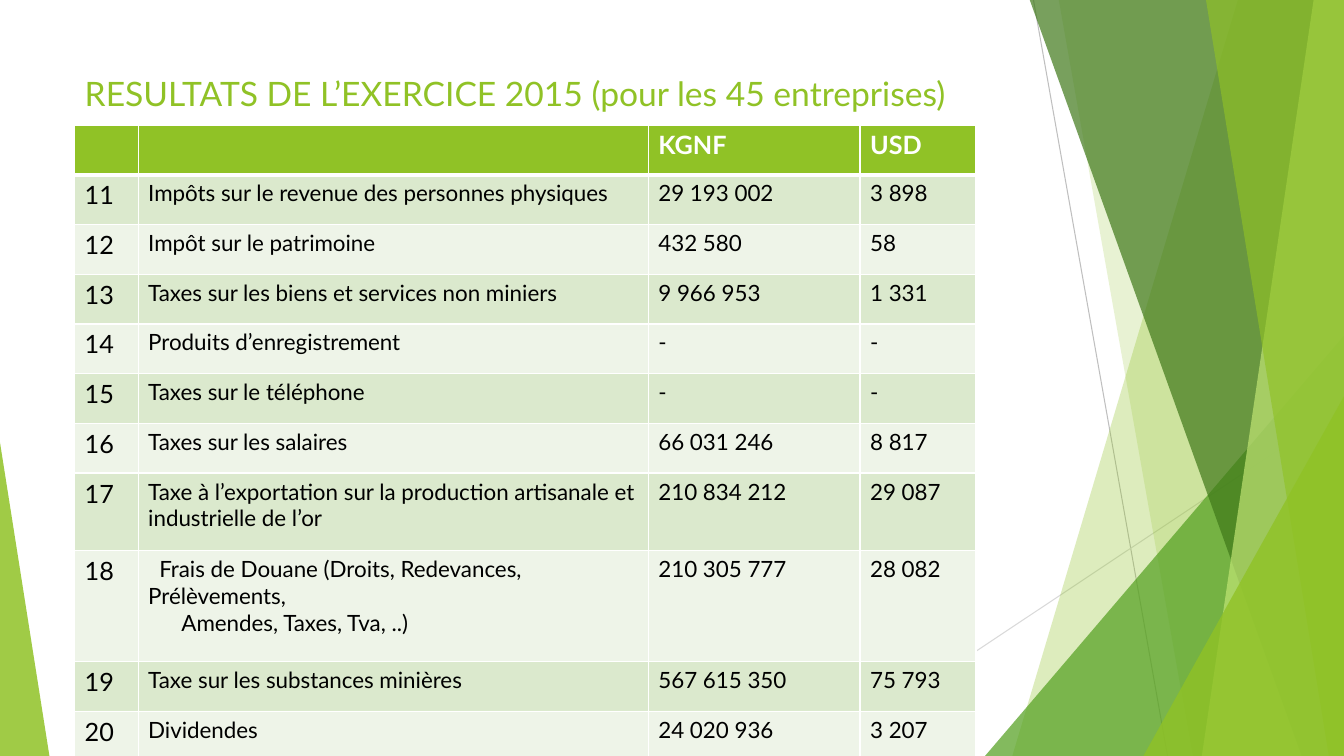
"""Build the slide of 2015 results for the 45 companies."""
from dataclasses import dataclass

from lxml import etree
from pptx import Presentation
from pptx.dml.color import RGBColor
from pptx.enum.shapes import MSO_CONNECTOR, MSO_SHAPE
from pptx.enum.text import MSO_ANCHOR, MSO_AUTO_SIZE, PP_ALIGN
from pptx.oxml.ns import qn
from pptx.util import Inches, Pt

STRAIGHT = MSO_CONNECTOR.STRAIGHT
TRIANGLE = MSO_SHAPE.ISOSCELES_TRIANGLE
LEFT = PP_ALIGN.LEFT
TOP = MSO_ANCHOR.TOP
NO_FIT = MSO_AUTO_SIZE.NONE


@dataclass(frozen=True)
class Theme:
    font: str = "Lato"
    lime: str = "90C226"
    green: str = "54A021"
    dark: str = "3F7819"
    pale: str = "C0E474"
    white: str = "FFFFFF"
    ink: str = "000000"
    bands: tuple[str, str] = ("DBE9CD", "EEF4E8")
    title: int = 24
    head: int = 18
    body: int = 16


@dataclass(frozen=True)
class Ray:
    start: tuple[float, float]
    end: tuple[float, float]
    color: str


@dataclass(frozen=True)
class Facet:
    top: tuple[float, float]
    foot: tuple[float, float]
    color: str
    alpha: int


@dataclass(frozen=True)
class Wedge:
    box: tuple[float, float, float, float]
    tip: float
    color: str
    alpha: int


@dataclass(frozen=True)
class Para:
    text: str
    margin: float = 0
    indent: float = 0


THEME = Theme()
WIDTH, HEIGHT = 13.33, 7.5
RAYS = [
    Ray((10.25, 0), (11.58, HEIGHT), "BFBFBF"),
    Ray((WIDTH, 4.03), (8.12, HEIGHT), "D9D9D9"),
]
PARTS = [
    Facet((12.28, -0.01), (10.04, HEIGHT), THEME.lime, 30),
    Facet((10.5, -0.01), (11.83, HEIGHT), THEME.lime, 20),
    Wedge((9.77, 3.33, 3.56, 4.17), 1, THEME.green, 72),
    Facet((10.21, -0.01), (12.91, HEIGHT), THEME.dark, 70),
    Facet((13.03, -0.01), (11.92, HEIGHT), THEME.pale, 70),
    Facet((11.96, -0.01), (13.18, HEIGHT), THEME.lime, 65),
    Wedge((11.34, 3.93, 1.99, 3.57), 1, THEME.lime, 80),
    Wedge((0, 4.39, 0.49, 3.11), 0, THEME.lime, 85),
]
CUSTOMS = (
    Para("Frais de Douane (Droits, Redevances, Prélèvements,", indent=0.11),
    Para("Amendes, Taxes, Tva, ..)", margin=0.33),
)
HEADS = ["", "", "KGNF", "USD"]
FIRST = 11
ITEMS = [
    ("Impôts sur le revenue des personnes physiques", "29 193 002", "3 898"),
    ("Impôt sur le patrimoine", "432 580", "58"),
    ("Taxes sur les biens et services non miniers", "9 966 953", "1 331"),
    ("Produits d’enregistrement", "-", "-"),
    ("Taxes sur le téléphone", "-", "-"),
    ("Taxes sur les salaires", "66 031 246", "8 817"),
    ("Taxe à l’exportation sur la production artisanale et industrielle de l’or",
     "210 834 212", "29 087"),
    (CUSTOMS, "210 305 777", "28 082"),
    ("Taxe sur les substances minières", "567 615 350", "75 793"),
    ("Dividendes", "24 020 936", "3 207"),
]
COLS = [0.63, 5.06, 2.1, 1.15]
TALL = {7: 0.77, 8: 1.1}
TABLE_H = 6.31


def paint(shape, color: str, alpha: int) -> None:
    shape.shadow.inherit = False
    shape.fill.solid()
    shape.fill.fore_color.rgb = RGBColor.from_string(color)
    shape.line.fill.background()
    tint = shape.fill._xPr.find(".//" + qn("a:srgbClr"))
    etree.SubElement(tint, qn("a:alpha"), val=str(alpha * 1000))


def draw_ray(slide, ray: Ray) -> None:
    ends = [Inches(v) for v in (*ray.start, *ray.end)]
    line = slide.shapes.add_connector(STRAIGHT, *ends)
    line.line.color.rgb = RGBColor.from_string(ray.color)
    line.line.width = Pt(0.75)
    etree.SubElement(line._element.spPr, qn("a:effectLst"))


def draw_part(slide, part: Facet | Wedge) -> None:
    if isinstance(part, Wedge):
        shape = slide.shapes.add_shape(TRIANGLE, *map(Inches, part.box))
        shape.adjustments[0] = part.tip
    else:
        edge = [(WIDTH, part.top[1]), (WIDTH, HEIGHT), part.foot]
        path = slide.shapes.build_freeform(*map(Inches, part.top))
        path.add_line_segments([(Inches(x), Inches(y)) for x, y in edge])
        shape = path.convert_to_shape()
    paint(shape, part.color, part.alpha)


def add_run(para, text: str, size: int, color: str, bold: bool = False) -> None:
    run = para.add_run()
    run.text = text
    run.font.name = THEME.font
    run.font.size = Pt(size)
    run.font.bold = bold
    run.font.color.rgb = RGBColor.from_string(color)


def draw_title(slide, text: str) -> None:
    title = slide.shapes.title
    title.left, title.top = Inches(0.74), Inches(0.67)
    title.width, title.height = Inches(11.61), Inches(0.57)
    frame = title.text_frame
    frame.auto_size = NO_FIT
    frame.vertical_anchor = TOP
    frame.paragraphs[0].alignment = LEFT
    add_run(frame.paragraphs[0], text, THEME.title, THEME.lime)


def set_edges(cell, base: int) -> None:
    props = cell._tc.get_or_add_tcPr()
    for side, width in (("L", 1), ("R", 1), ("T", 1), ("B", base)):
        edge = etree.SubElement(props, qn("a:ln" + side), w=str(Pt(width)))
        fill = etree.SubElement(edge, qn("a:solidFill"))
        etree.SubElement(fill, qn("a:srgbClr"), val=THEME.white)


def fill_cell(cell, paras: tuple[Para, ...], row: int, col: int) -> None:
    head = row == 0
    set_edges(cell, 3 if head else 1)
    cell.fill.solid()
    back = THEME.lime if head else THEME.bands[(row - 1) % 2]
    cell.fill.fore_color.rgb = RGBColor.from_string(back)
    size = THEME.head if head or col == 0 else THEME.body
    color = THEME.white if head else THEME.ink
    frame = cell.text_frame
    for pos, item in enumerate(paras):
        para = frame.add_paragraph() if pos else frame.paragraphs[0]
        props = para._p.get_or_add_pPr()
        props.set("marL", str(Inches(item.margin)))
        props.set("indent", str(Inches(item.indent)))
        if item.text:
            add_run(para, item.text, size, color, head)


def draw_table(slide) -> None:
    rows = [HEADS] + [[str(n), *item] for n, item in enumerate(ITEMS, FIRST)]
    box = [Inches(v) for v in (0.74, 1.24, sum(COLS), TABLE_H)]
    table = slide.shapes.add_table(len(rows), len(COLS), *box).table
    for col, width in zip(table.columns, COLS):
        col.width = Inches(width)
    base = (TABLE_H - sum(TALL.values())) / (len(rows) - len(TALL))
    for r, row in enumerate(rows):
        table.rows[r].height = Inches(TALL.get(r, base))
        for c, value in enumerate(row):
            paras = (Para(value),) if isinstance(value, str) else value
            fill_cell(table.cell(r, c), paras, r, c)


def main() -> None:
    deck = Presentation()
    deck.slide_width, deck.slide_height = Inches(WIDTH), Inches(HEIGHT)
    slide = deck.slides.add_slide(deck.slide_layouts[5])
    for ray in RAYS:
        draw_ray(slide, ray)
    for part in PARTS:
        draw_part(slide, part)
    draw_title(slide, "RESULTATS DE L’EXERCICE 2015 (pour les 45 entreprises)")
    draw_table(slide)
    deck.save("out.pptx")


if __name__ == "__main__":
    main()
